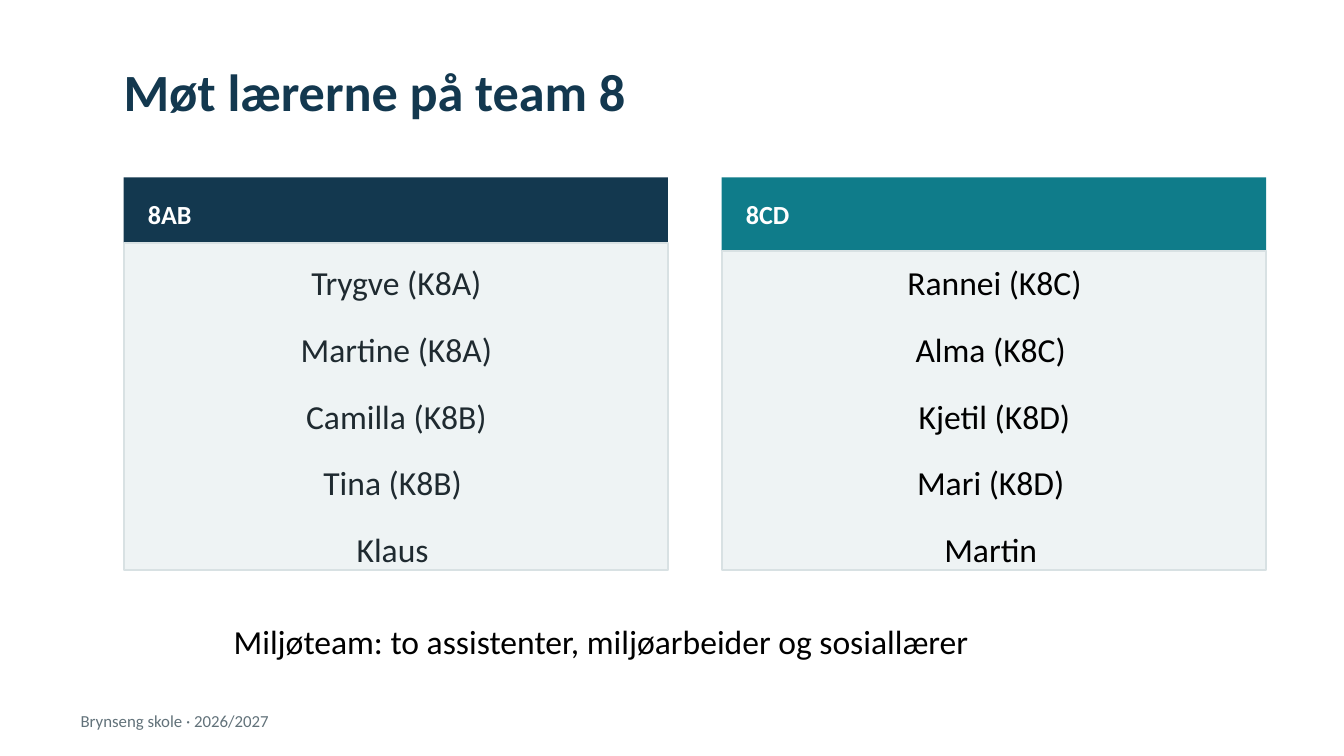
import pptx
import pptx.dml.color
import pptx.enum.shapes
import pptx.enum.text
import pptx.util

Pt = pptx.util.Pt
RGBColor = pptx.dml.color.RGBColor
ALIGN = pptx.enum.text.PP_ALIGN
ANCHOR = pptx.enum.text.MSO_ANCHOR

NAVY = RGBColor(0x13, 0x38, 0x4F)
TEAL = RGBColor(0x0F, 0x7C, 0x8A)
PANEL = RGBColor(0xEE, 0xF3, 0xF4)
BORDER = RGBColor(0xD8, 0xE1, 0xE3)
INK = RGBColor(0x1F, 0x2A, 0x30)
GREY = RGBColor(0x62, 0x72, 0x7A)
BLACK = RGBColor(0, 0, 0)
WHITE = RGBColor(0xFF, 0xFF, 0xFF)

MARGIN = 66.24
CARD_WIDTH = 291.6
CARD_STEP = 320.4
CARD_TOP = 95.04
CARD_BOTTOM = 305.28
HEADER_HEIGHT = 39.6
PADDING = 12.96


class SlideBuilder:
    font_name = "Calibri"

    def __init__(self, slide):
        self.slide = slide

    def text(self, lines, left, top, width, height, size, color, bold=False,
             align=ALIGN.LEFT, anchor=ANCHOR.MIDDLE, inset=(0, 0),
             line_spacing=None, space_after=None):
        shape = self.slide.shapes.add_textbox(Pt(left), Pt(top), Pt(width), Pt(height))
        frame = shape.text_frame
        frame.word_wrap = True
        frame.vertical_anchor = anchor
        frame.margin_left = frame.margin_right = Pt(inset[0])
        frame.margin_top = frame.margin_bottom = Pt(inset[1])
        for index, line in enumerate(lines):
            paragraph = frame.add_paragraph() if index else frame.paragraphs[0]
            paragraph.alignment = align
            if line_spacing is not None:
                paragraph.line_spacing = line_spacing
            if space_after is not None:
                paragraph.space_after = Pt(space_after)
            run = paragraph.add_run()
            run.text = line
            run.font.name = self.font_name
            run.font.size = Pt(size)
            run.font.bold = bold
            run.font.color.rgb = color
        return shape

    def rectangle(self, left, top, width, height, fill, line=None):
        shape = self.slide.shapes.add_shape(
            pptx.enum.shapes.MSO_SHAPE.RECTANGLE,
            Pt(left), Pt(top), Pt(width), Pt(height))
        shape.shadow.inherit = False
        shape.fill.solid()
        shape.fill.fore_color.rgb = fill
        if line is None:
            shape.line.fill.background()
        else:
            shape.line.color.rgb = line
            shape.line.width = Pt(1)

    def team_card(self, left, heading, header_color, panel_top, names, name_color):
        self.rectangle(left, CARD_TOP, CARD_WIDTH, HEADER_HEIGHT, header_color)
        self.text([heading], left + PADDING, CARD_TOP, 270, HEADER_HEIGHT,
                  14, WHITE, bold=True)
        self.rectangle(left, panel_top, CARD_WIDTH, CARD_BOTTOM - panel_top,
                       PANEL, BORDER)
        self.text(names, left + PADDING, 138.24, 266.4, 158.4, 18, name_color,
                  align=ALIGN.CENTER, anchor=ANCHOR.TOP,
                  line_spacing=1.1, space_after=12)


def main():
    presentation = pptx.Presentation()
    presentation.slide_width = Pt(720)
    presentation.slide_height = Pt(405)
    slide = presentation.slides.add_slide(presentation.slide_layouts[6])
    builder = SlideBuilder(slide)

    # Title and footer
    builder.text(["Møt lærerne på team 8"], MARGIN, 28.8, 612, 39.6,
                 28, NAVY, bold=True)
    builder.text(["Brynseng skole · 2026/2027"], 43.2, 375.12, 360, 21.6, 9, GREY)

    # Team cards
    teams = [
        ("8AB", NAVY, 130.32, INK,
         ["Trygve (K8A)", "Martine (K8A)", "Camilla (K8B)", "Tina (K8B) ", "Klaus "]),
        ("8CD", TEAL, 134.64, BLACK,
         ["Rannei (K8C)", "Alma (K8C) ", "Kjetil (K8D)", "Mari (K8D) ", "Martin "]),
    ]
    for column, (heading, header_color, panel_top, name_color, names) in enumerate(teams):
        builder.team_card(MARGIN + column * CARD_STEP, heading, header_color,
                          panel_top, names, name_color)

    # Support team
    support = builder.text(["Miljøteam: to assistenter, miljøarbeider og sosiallærer"],
                           118.08, 329.04, 486.72, 28.8, 18, BLACK,
                           anchor=ANCHOR.TOP, inset=(7.2, 3.6))
    support.text_frame.auto_size = pptx.enum.text.MSO_AUTO_SIZE.SHAPE_TO_FIT_TEXT

    presentation.save("out.pptx")


if __name__ == "__main__":
    main()
